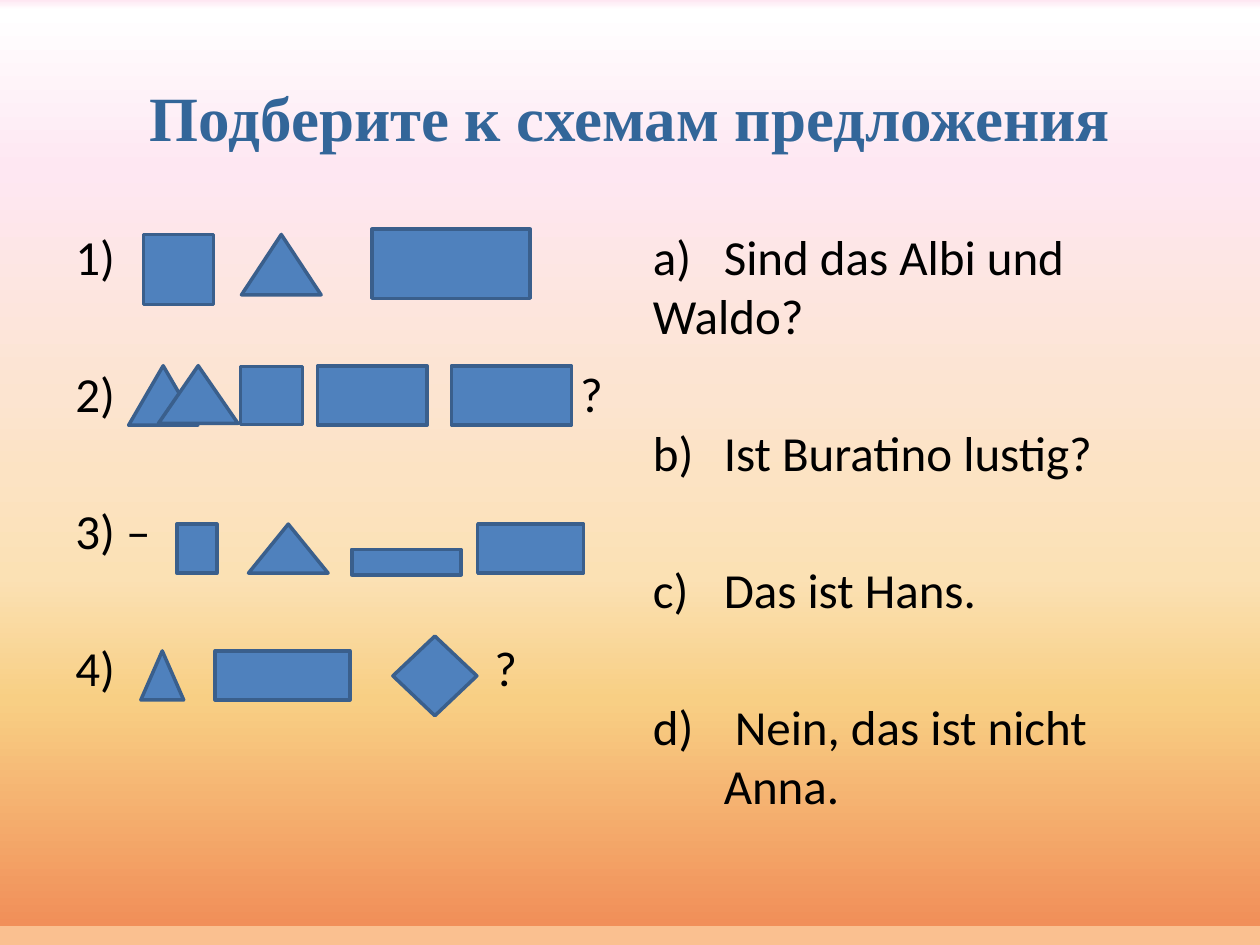
from dataclasses import dataclass

from lxml import etree
from pptx import Presentation
from pptx.dml.color import RGBColor
from pptx.enum.shapes import MSO_SHAPE
from pptx.enum.text import MSO_ANCHOR, PP_ALIGN
from pptx.oxml.ns import qn
from pptx.slide import Slide
from pptx.text.text import TextFrame
from pptx.util import Pt

RECT = MSO_SHAPE.RECTANGLE
TRIANGLE = MSO_SHAPE.ISOSCELES_TRIANGLE
DIAMOND = MSO_SHAPE.DIAMOND
MIDDLE = MSO_ANCHOR.MIDDLE
CENTER = PP_ALIGN.CENTER

FILL, OUTLINE = "4F81BD", "3A5F8C"
ROW_GAP = 44.7
INDENT = 40.5
COLUMN_TOP, COLUMN_WIDTH, COLUMN_HEIGHT = 126, 318, 356
LEFT_COLUMN, RIGHT_COLUMN = 36, 366

GRADIENT = [
    (0, "FEE7F2"), (1, "FFFFFF"), (18, "FEE7F2"), (42, "FCE4D0"), (50, "FCE3C3"),
    (61, "FBE1B4"), (74, "F8CF84"), (98, "F18F59"), (98, "FAC090"),
]


@dataclass
class Figure:
    kind: MSO_SHAPE
    left: float
    top: float
    width: float
    height: float


@dataclass
class Line:
    text: str
    tab: float = 0
    lettered: bool = False


SCHEMES = [
    Figure(RECT, 82, 134, 40, 40),
    Figure(TRIANGLE, 138, 134, 45.5, 34.5),
    Figure(RECT, 212.5, 131, 90.5, 39.5),
    Figure(TRIANGLE, 73.5, 209, 39.5, 34),
    Figure(TRIANGLE, 90.5, 209, 45.5, 33),
    Figure(RECT, 137.5, 209.5, 35.5, 33),
    Figure(RECT, 258, 209, 68.5, 34),
    Figure(RECT, 181.5, 209, 62.5, 34),
    Figure(RECT, 101, 299.5, 23, 28),
    Figure(TRIANGLE, 142, 299.5, 45.5, 28),
    Figure(RECT, 201, 314, 62.5, 14.5),
    Figure(RECT, 273, 299.5, 60.5, 28),
    Figure(TRIANGLE, 80.5, 372, 24.5, 28),
    Figure(RECT, 123, 372, 77, 28),
    Figure(DIAMOND, 224.5, 363.5, 48, 45.5),
]

NUMBERS = [Line("1)"), Line("2)\t?", tab=288.5), Line("3) –"), Line("4)\t?", tab=239.5)]

SENTENCES = [
    Line("а)\tSind das Albi und Waldo?", tab=INDENT),
    Line("Ist Buratino lustig?", lettered=True),
    Line("Das ist Hans.", lettered=True),
    Line(" Nein, das ist nicht Anna.", lettered=True),
]


def color(value: str) -> RGBColor:
    """Turn a hex string into a colour."""
    return RGBColor.from_string(value)


def paint_background(page: Slide) -> None:
    """Fill the page with the vertical gradient."""
    fill = page.background.fill
    fill.gradient()
    fill.gradient_angle = 270
    stops = page.element.find(".//" + qn("a:gsLst"))
    for stop in list(stops):
        stops.remove(stop)
    for percent, value in GRADIENT:
        stop = etree.SubElement(stops, qn("a:gs"), pos=str(percent * 1000))
        etree.SubElement(stop, qn("a:srgbClr"), val=value)


def add_box(page: Slide, left: float, top: float, width: float, height: float) -> TextFrame:
    """Add a wrapping text box and return its text frame."""
    box = page.shapes.add_textbox(Pt(left), Pt(top), Pt(width), Pt(height))
    box.text_frame.word_wrap = True
    return box.text_frame


def add_title(page: Slide, text: str) -> None:
    """Add the centred heading."""
    frame = add_box(page, 36, 21.6, 648, 90)
    frame.vertical_anchor = MIDDLE
    para = frame.paragraphs[0]
    para.text = text
    para.alignment = CENTER
    para.font.name = "Times New Roman"
    para.font.size = Pt(36)
    para.font.bold = True
    para.font.color.rgb = color("336699")


def add_column(page: Slide, left: float, lines: list[Line]) -> None:
    """Add a column of evenly spaced lines with tabs or lettering."""
    frame = add_box(page, left, COLUMN_TOP, COLUMN_WIDTH, COLUMN_HEIGHT)
    for index, line in enumerate(lines):
        para = frame.add_paragraph() if index else frame.paragraphs[0]
        para.text = line.text
        if index:
            para.space_before = Pt(ROW_GAP)
        properties = para._p.get_or_add_pPr()
        if line.lettered:
            properties.set("marL", str(Pt(INDENT)))
            properties.set("indent", str(-Pt(INDENT)))
            etree.SubElement(properties, qn("a:buAutoNum"), type="alphaLcParenR", startAt="2")
        if line.tab:
            tabs = etree.SubElement(properties, qn("a:tabLst"))
            etree.SubElement(tabs, qn("a:tab"), pos=str(Pt(line.tab)), algn="l")
        para.font.name = "Calibri"
        para.font.size = Pt(28)
        para.font.color.rgb = color("000000")


def add_figure(page: Slide, figure: Figure) -> None:
    """Add one figure of a sentence scheme."""
    shape = page.shapes.add_shape(
        figure.kind, Pt(figure.left), Pt(figure.top), Pt(figure.width), Pt(figure.height)
    )
    shape.shadow.inherit = False
    shape.fill.solid()
    shape.fill.fore_color.rgb = color(FILL)
    shape.line.color.rgb = color(OUTLINE)
    shape.line.width = Pt(2)


def main() -> None:
    """Build and save the deck."""
    deck = Presentation()
    deck.slide_width, deck.slide_height = Pt(720), Pt(540)
    page = deck.slides.add_slide(deck.slide_layouts[6])
    paint_background(page)
    add_title(page, "Подберите к схемам предложения")
    add_column(page, LEFT_COLUMN, NUMBERS)
    add_column(page, RIGHT_COLUMN, SENTENCES)
    for figure in SCHEMES:
        add_figure(page, figure)
    deck.save("out.pptx")


if __name__ == "__main__":
    main()
